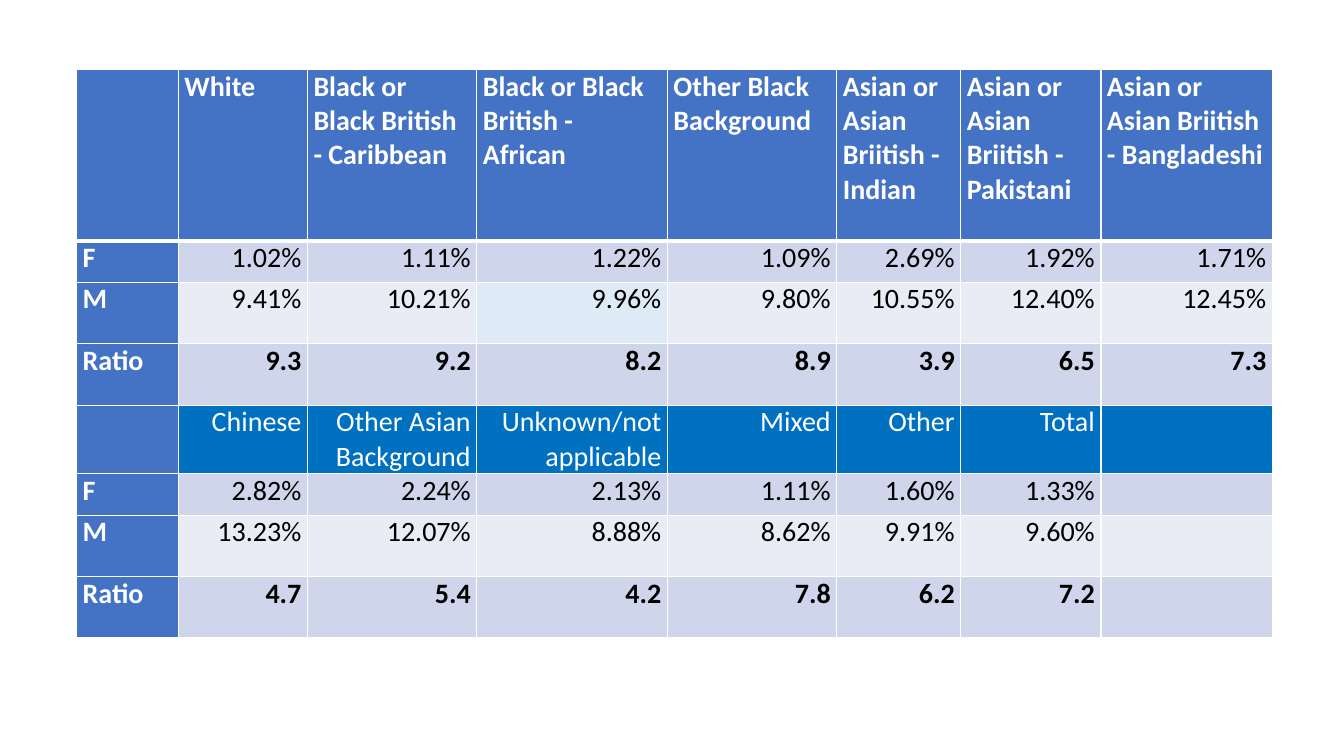
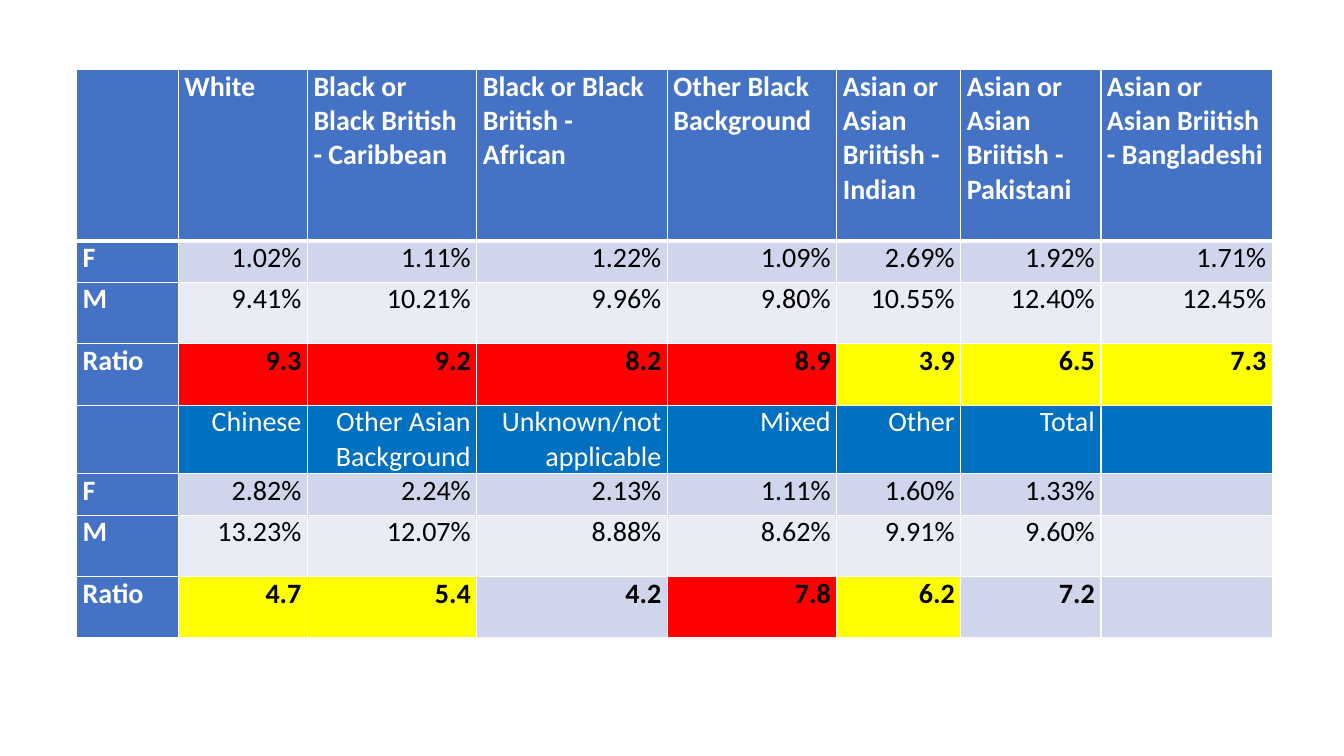
from lxml.etree import SubElement
from pptx import Presentation
from pptx.dml.color import RGBColor
from pptx.enum.text import PP_ALIGN as Align
from pptx.oxml.ns import qn
from pptx.util import Inches, Pt

COLORS = {
    "header": "4472C4", "subheader": "0070C0",
    "band_dark": "CFD5EA", "band_light": "E9EBF5", "tint": "DEEBF7",
    "high": "FF0000", "medium": "FFFF00",
    "white": "FFFFFF", "black": "000000",
}
FONT = "Calibri"

COLUMN_WIDTHS = [1.01, 1.28, 1.68, 1.89, 1.68, 1.23, 1.39, 1.7]
ROW_HEIGHTS = [1.7, 0.41, 0.61, 0.61, 0.68, 0.41, 0.61, 0.61]
SUBHEADER_ROW = 4
ROWS = [
    ["", "White", "Black or Black British - Caribbean", "Black or Black British - African",
     "Other Black Background", "Asian or Asian Briitish - Indian",
     "Asian or Asian Briitish - Pakistani", "Asian or Asian Briitish - Bangladeshi"],
    ["F", "1.02%", "1.11%", "1.22%", "1.09%", "2.69%", "1.92%", "1.71%"],
    ["M", "9.41%", "10.21%", "9.96%", "9.80%", "10.55%", "12.40%", "12.45%"],
    ["Ratio", "9.3", "9.2", "8.2", "8.9", "3.9", "6.5", "7.3"],
    ["", "Chinese", "Other Asian Background", "Unknown/not applicable",
     "Mixed", "Other", "Total", ""],
    ["F", "2.82%", "2.24%", "2.13%", "1.11%", "1.60%", "1.33%", ""],
    ["M", "13.23%", "12.07%", "8.88%", "8.62%", "9.91%", "9.60%", ""],
    ["Ratio", "4.7", "5.4", "4.2", "7.8", "6.2", "7.2", ""],
]

# Highlighted cells of each slide, keyed by (row, column)
african_male = {(2, 3): "tint"}
ratio_levels = {
    **{(3, col): "high" for col in range(1, 5)},
    **{(3, col): "medium" for col in range(5, 8)},
    **{(7, col): "medium" for col in (1, 2, 5)},
    (7, 4): "high",
}


def write_text(cell, text, *, color="black", bold=False, align=Align.RIGHT):
    paragraph = cell.text_frame.paragraphs[0]
    paragraph.alignment = align
    paragraph.font.size = Pt(20)
    if not text:
        return
    run = paragraph.add_run()
    run.text = text
    run.font.name = FONT
    run.font.size = Pt(20)
    run.font.bold = bold
    run.font.color.rgb = RGBColor.from_string(COLORS[color])


def add_borders(cell, top=1, bottom=1):
    properties = cell._tc.get_or_add_tcPr()
    for side, width in (("L", 1), ("R", 1), ("T", top), ("B", bottom)):
        line = SubElement(properties, qn(f"a:ln{side}"), w=str(Pt(width)))
        fill = SubElement(line, qn("a:solidFill"))
        SubElement(fill, qn("a:srgbClr"), val=COLORS["white"])


prs = Presentation()
prs.slide_width, prs.slide_height = Inches(13.33), Inches(7.5)

for highlights in (african_male, ratio_levels):
    slide = prs.slides.add_slide(prs.slide_layouts[6])
    ratios = slide.shapes.add_table(
        len(ROWS), len(COLUMN_WIDTHS), Inches(0.76), Inches(0.69),
        Inches(sum(COLUMN_WIDTHS)), Inches(sum(ROW_HEIGHTS))).table
    ratios.first_row = ratios.horz_banding = False
    for column, width in zip(ratios.columns, COLUMN_WIDTHS):
        column.width = Inches(width)
    for row, height in zip(ratios.rows, ROW_HEIGHTS):
        row.height = Inches(height)

    for r, texts in enumerate(ROWS):
        for c, text in enumerate(texts):
            cell = ratios.cell(r, c)
            cell.margin_left = cell.margin_right = Inches(0.06)
            cell.margin_top = cell.margin_bottom = 0

            # Heavy rule under the header row
            add_borders(cell, top=3 if r == 1 else 1, bottom=3 if r == 0 else 1)

            # Headings, then the second heading row, then values
            if r == 0 or c == 0:
                background = "header"
                write_text(cell, text, color="white", bold=True, align=Align.LEFT)
            elif r == SUBHEADER_ROW:
                background = "subheader"
                write_text(cell, text, color="white")
            else:
                background = "band_light" if texts[0] == "M" else "band_dark"
                write_text(cell, text, bold=texts[0] == "Ratio")
            background = highlights.get((r, c), background)
            cell.fill.solid()
            cell.fill.fore_color.rgb = RGBColor.from_string(COLORS[background])

prs.save("out.pptx")
